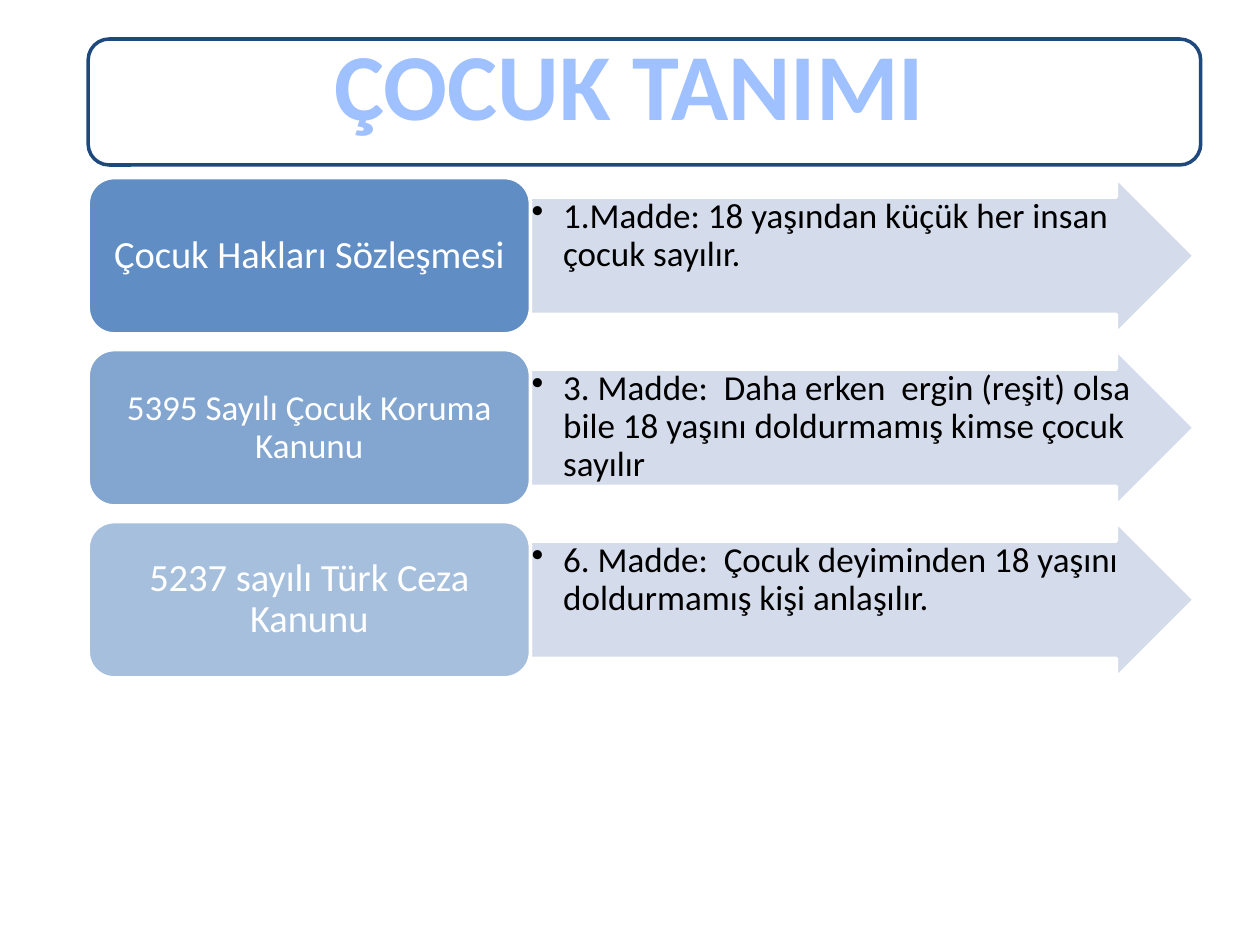
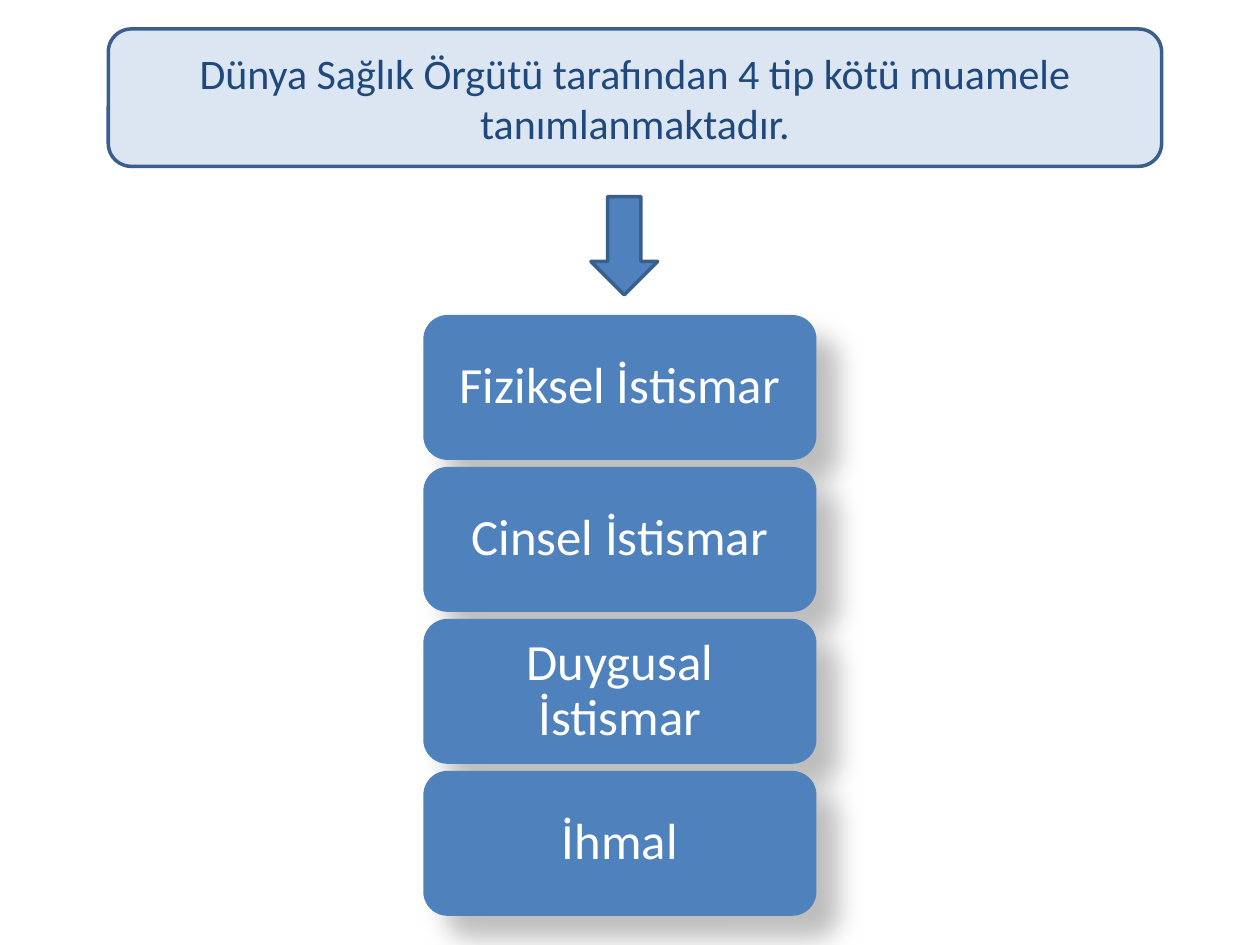
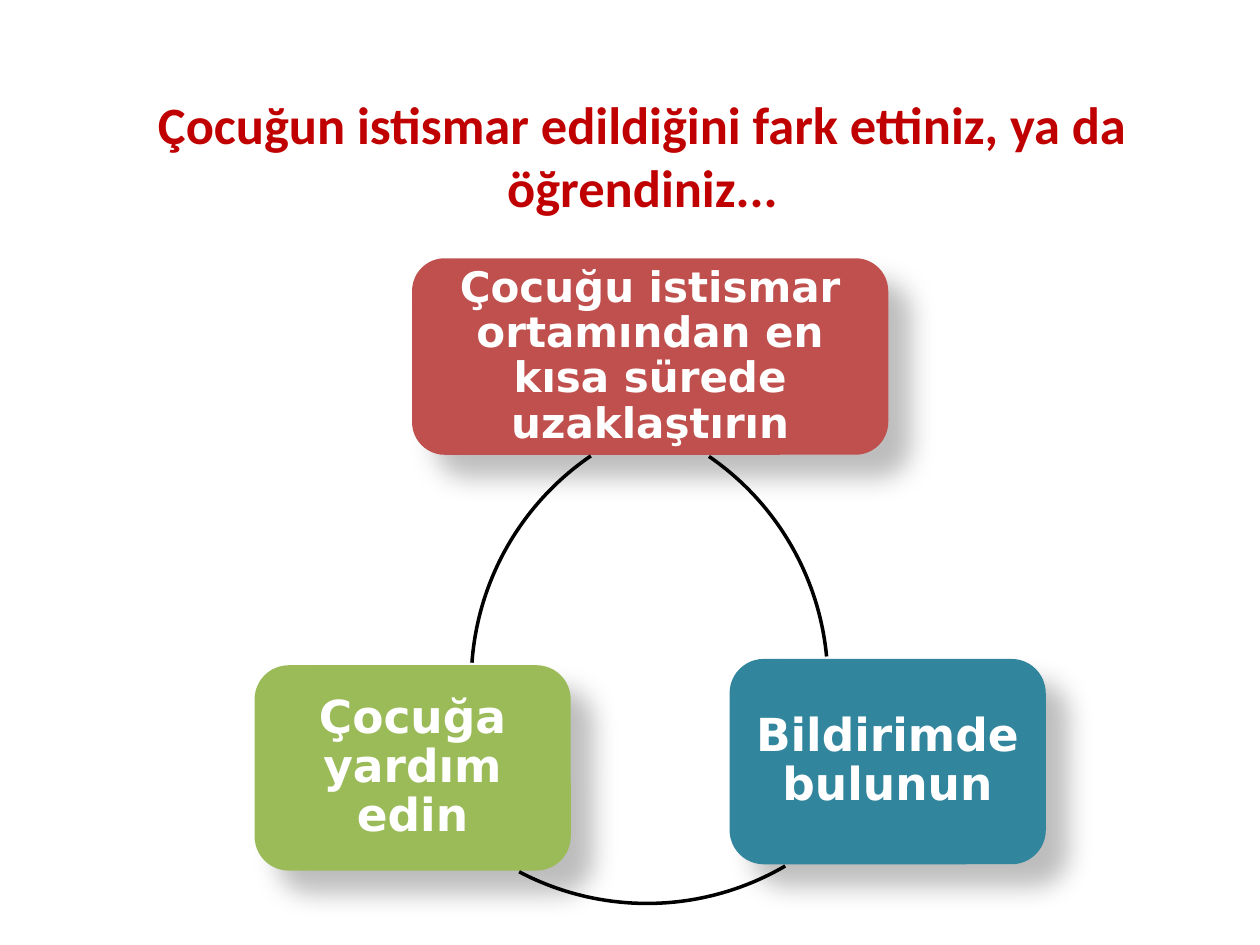
import lxml.etree
import pptx
import pptx.dml.color
import pptx.enum.shapes
import pptx.enum.text
import pptx.oxml
import pptx.oxml.ns
import pptx.util

COLORS = {
    "blue": "4F81BD", "pale": "D0D8E8", "light": "DCE6F2", "edge": "3A5F8C",
    "navy": "1F497D", "sky": "A0C1FF", "red": "C0504D", "teal": "31859C",
    "green": "9BBB59", "crimson": "C00000", "white": "FFFFFF", "black": "000000",
}
COLUMNS, ROWS = 100, 75
WIDTH, HEIGHT = pptx.util.Inches(10), pptx.util.Inches(7.5)
SHAPES = pptx.enum.shapes.MSO_SHAPE
ANCHOR = pptx.enum.text.MSO_ANCHOR
ALIGN = pptx.enum.text.PP_ALIGN
DRAWING = pptx.oxml.ns.nsdecls("a")
TITLE_LAYOUT = 5

LAWS = [
    ("Çocuk Hakları Sözleşmesi", 22, 90,
     "1.Madde: 18 yaşından küçük her insan çocuk sayılır."),
    ("5395 Sayılı Çocuk Koruma Kanunu", 20, 70,
     "3. Madde:  Daha erken  ergin (reşit) olsa bile 18 yaşını doldurmamış kimse çocuk sayılır"),
    ("5237 sayılı Türk Ceza Kanunu", 22, 50,
     "6. Madde:  Çocuk deyiminden 18 yaşını doldurmamış kişi anlaşılır."),
]
ABUSE_TYPES = ["Fiziksel İstismar", "Cinsel İstismar", "Duygusal İstismar", "İhmal"]
STEPS = [
    ("Çocuğu istismar ortamından en kısa sürede uzaklaştırın", "red", 24, (32.7, 20.5, 37.8, 15.6)),
    ("Bildirimde bulunun", "teal", 26, (57.9, 52.3, 25.1, 16.3)),
    ("Çocuğa yardım edin", "green", 26, (20.2, 52.8, 25.1, 16.3)),
]
ARCS = [(22.2, 32.4, 304.5, 354.6), (29.6, 28.2, 59.7, 117.8), (37.4, 32.4, 184.1, 235.7)]
ARC_SIZE = 43.5
ARC_UNITS_PER_DEGREE = 0.6


def color(name):
    return pptx.dml.color.RGBColor.from_string(COLORS[name])


def apply(target, values):
    for name, value in values.items():
        setattr(target, name, value)


def cells(left, top, width, height):
    return {
        "left": int(WIDTH * left / COLUMNS), "top": int(HEIGHT * top / ROWS),
        "width": int(WIDTH * width / COLUMNS), "height": int(HEIGHT * height / ROWS),
    }


def paint(shape, fill=None, line=None, alpha=100):
    if fill:
        shape.fill.solid()
        shape.fill.fore_color.rgb = color(fill)
        if alpha < 100:
            choice = shape.fill.fore_color._xFill[0]
            lxml.etree.SubElement(choice, pptx.oxml.ns.qn("a:alpha"), val=str(alpha * 1000))
    else:
        shape.fill.background()
    if line:
        shape.line.color.rgb = color(line)
        shape.line.width = pptx.util.Pt(2)
    else:
        shape.line.fill.background()


def add_shape(slide, kind, place, fill=None, line=None, alpha=100):
    shape = slide.shapes.add_shape(kind, **cells(*place))
    shape.shadow.inherit = False
    paint(shape, fill, line, alpha)
    return shape


def write(shape, text, size, ink, font="Calibri", bold=False, align=ALIGN.CENTER,
          anchor=ANCHOR.MIDDLE, spacing=0.9, margins=(0.1, 0.05, 0.1, 0.05), wrap=True):
    frame = shape.text_frame
    sides = ("margin_left", "margin_top", "margin_right", "margin_bottom")
    apply(frame, dict(zip(sides, map(pptx.util.Inches, margins))))
    apply(frame, {"word_wrap": wrap, "vertical_anchor": anchor,
                  "auto_size": pptx.enum.text.MSO_AUTO_SIZE.NONE})
    paragraph = frame.paragraphs[0]
    apply(paragraph, {"alignment": align, "line_spacing": spacing})
    run = paragraph.add_run()
    run.text = text
    apply(run.font, {"name": font, "size": pptx.util.Pt(size), "bold": bold})
    run.font.color.rgb = color(ink)
    return paragraph


def add_bullet(paragraph):
    properties = paragraph._p.get_or_add_pPr()
    indent = pptx.util.Inches(0.25)
    properties.set("marL", str(indent))
    properties.set("indent", str(-indent))
    lxml.etree.SubElement(properties, pptx.oxml.ns.qn("a:buChar"), char="•")


def cast_shadow(shape):
    effects = shape._element.spPr.find(pptx.oxml.ns.qn("a:effectLst"))
    effects.append(pptx.oxml.parse_xml(
        f'<a:outerShdw {DRAWING} blurRad="{pptx.util.Pt(15)}" dist="{pptx.util.Pt(18)}" '
        f'dir="2700000" algn="tl" rotWithShape="0"><a:srgbClr val="{COLORS["black"]}">'
        '<a:alpha val="26000"/></a:srgbClr></a:outerShdw>'))


def add_card(slide, place, fill, text, size, **style):
    card = add_shape(slide, SHAPES.ROUNDED_RECTANGLE, place, fill)
    cast_shadow(card)
    write(card, text, size, "white", **style)


def add_title(slide, place, text, size, ink, **style):
    title = slide.shapes.title
    apply(title, cells(*place))
    write(title, text, size, ink, spacing=1.0, **style)
    slide.shapes._spTree.append(title._element)


def add_law(slide, top, name, size, alpha, article):
    height = 12.4
    arrow = add_shape(slide, SHAPES.RIGHT_ARROW, (42.1, top, 52.7, height), "pale", "white", 90)
    arrow.adjustments[0], arrow.adjustments[1] = 0.75, 0.5
    add_bullet(write(arrow, article, 20, "black", align=ALIGN.LEFT, anchor=ANCHOR.TOP,
                     margins=(0.01, 0.01, 0.01, 0.01)))
    label = add_shape(slide, SHAPES.ROUNDED_RECTANGLE, (7, top, 35.1, height),
                      "blue", "white", alpha)
    write(label, name, size, "white", margins=(0.09, 0.05, 0.09, 0.05))


def add_arc(slide, left, top, start, end):
    arc = add_shape(slide, SHAPES.ARC, (left, top, ARC_SIZE, ARC_SIZE), line="black")
    for index, angle in enumerate((start, end)):
        arc.adjustments[index] = angle * ARC_UNITS_PER_DEGREE


def build_definition(slide):
    for row, law in enumerate(LAWS):
        add_law(slide, 14.1 + row * 13.65, *law)
    add_shape(slide, SHAPES.ROUNDED_RECTANGLE, (7, 3.1, 88.3, 10), line="navy")
    add_title(slide, (25.3, 1.6, 49.3, 10.1), "ÇOCUK TANIMI", 54, "sky",
              bold=True, anchor=ANCHOR.TOP, wrap=False)


def build_abuse_types(slide):
    for row, name in enumerate(ABUSE_TYPES):
        add_card(slide, (33.6, 25 + row * 12.06, 31.2, 11.5), "blue", name, 29,
                 margins=(0.12, 0.06, 0.12, 0.06))
    add_shape(slide, SHAPES.DOWN_ARROW, (46.9, 15.6, 5.3, 7.8), "blue", "edge")
    banner = (8.6, 2.3, 83.6, 10.9)
    add_shape(slide, SHAPES.ROUNDED_RECTANGLE, banner, "light", "edge")
    add_title(slide, banner,
              "Dünya Sağlık Örgütü tarafından 4 tip kötü muamele tanımlanmaktadır.",
              24, "navy")


def build_response(slide):
    add_title(slide, (9.8, 6.8, 82.4, 11),
              "Çocuğun istismar edildiğini fark ettiniz, ya da öğrendiniz...",
              30, "crimson", bold=True)
    for text, fill, size, place in STEPS:
        add_card(slide, place, fill, text, size, font="DejaVu Sans", bold=True,
                 margins=(0.1, 0.1, 0.1, 0.1))
    for arc in ARCS:
        add_arc(slide, *arc)


def main():
    presentation = pptx.Presentation()
    apply(presentation, {"slide_width": WIDTH, "slide_height": HEIGHT})
    for build in (build_definition, build_abuse_types, build_response):
        build(presentation.slides.add_slide(presentation.slide_layouts[TITLE_LAYOUT]))
    presentation.save("out.pptx")


if __name__ == "__main__":
    main()
